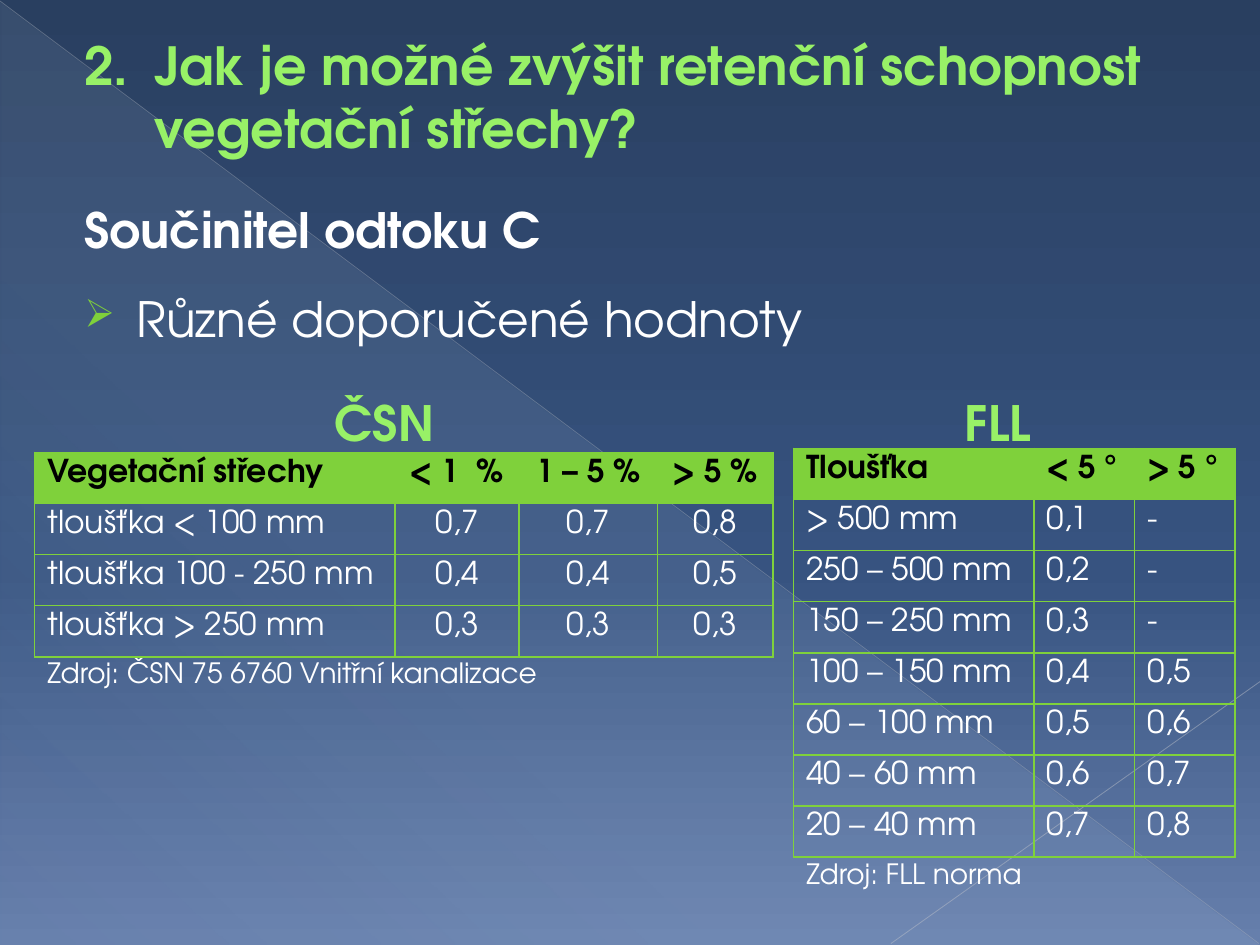
from lxml import etree
from pptx import Presentation
from pptx.dml.color import RGBColor
from pptx.enum.shapes import MSO_CONNECTOR, MSO_SHAPE
from pptx.enum.text import MSO_ANCHOR, PP_ALIGN
from pptx.oxml.ns import qn
from pptx.util import Cm, Pt

STRAIGHT = MSO_CONNECTOR.STRAIGHT
TRIANGLE = MSO_SHAPE.RIGHT_TRIANGLE
MIDDLE = MSO_ANCHOR.MIDDLE
LEFT, CENTER = PP_ALIGN.LEFT, PP_ALIGN.CENTER

FONT = "TeX Gyre Adventor"
BODY_SIZE = 27.8
NO_STYLE = "{2D5ABB26-0587-4C30-8999-92F81FD0307C}"
COLORS = {
    "sky_top": "293F60", "sky_mid": "375380", "sky_low": "667FAC",
    "glow": "D6ECFF", "diagonal": "B7BCC5", "corner": "BFC3CB",
    "heading": "98F167", "accent": "7FD13B", "text": "FFFFFF", "dark": "000000",
}
ROW_HEIGHT = 1.03

CSN_ROWS = [
    ["Vegetační střechy", "< 1  %", "1 – 5 %", "> 5 %"],
    ["tloušťka < 100 mm", "0,7", "0,7", "0,8"],
    ["tloušťka 100 - 250 mm", "0,4", "0,4", "0,5"],
    ["tloušťka > 250 mm", "0,3", "0,3", "0,3"],
]
FLL_ROWS = [
    ["Tloušťka", "< 5 °", "> 5 °"],
    ["> 500 mm", "0,1", "-"],
    ["250 – 500 mm", "0,2", "-"],
    ["150 – 250 mm", "0,3", "-"],
    ["100 – 150 mm", "0,4", "0,5"],
    ["60 – 100 mm", "0,5", "0,6"],
    ["40 – 60 mm", "0,6", "0,7"],
    ["20 – 40 mm", "0,7", "0,8"],
]


def rgb(name):
    return RGBColor.from_string(COLORS[name])


def add_xml(parent, tag, **attrs):
    child = etree.SubElement(parent, qn(tag))
    for key, value in attrs.items():
        child.set(key, str(value))
    return child


def set_gradient(fill, props, stops, angle):
    """Stops are (position %, colour name, opacity %)."""
    fill.gradient()
    grad = props.find(qn("a:gradFill"))
    for child in list(grad):
        grad.remove(child)
    stop_list = add_xml(grad, "a:gsLst")
    for pos, color, opacity in stops:
        gs = add_xml(stop_list, "a:gs", pos=pos * 1000)
        clr = add_xml(gs, "a:srgbClr", val=COLORS[color])
        add_xml(clr, "a:alpha", val=opacity * 1000)
    add_xml(grad, "a:lin", ang=angle * 60000, scaled=0)


def add_line(slide, start, end, color, width, opacity):
    ln = slide.shapes.add_connector(STRAIGHT, *map(Cm, start + end))
    ln.line.color.rgb = rgb(color)
    ln.line.width = Pt(width)
    props = ln._element.spPr
    add_xml(next(props.iter(qn("a:srgbClr"))), "a:alpha", val=opacity * 1000)
    add_xml(props, "a:effectLst")


def add_text(p, text, size, color, bold=False):
    r = p.add_run()
    r.text = text
    values = {"name": FONT, "size": Pt(size), "bold": bold}
    for name, value in values.items():
        setattr(r.font, name, value)
    r.font.color.rgb = rgb(color)


def add_box(slide, left, top, width, height):
    sp = slide.shapes.add_textbox(Cm(left), Cm(top), Cm(width), Cm(height))
    sp.text_frame.word_wrap = True
    return sp.text_frame


def format_paragraph(p, margin, indent, before, after):
    p.space_before, p.space_after = Pt(before), Pt(after)
    props = p._p.get_or_add_pPr()
    props.set("marL", str(Cm(margin)))
    props.set("indent", str(Cm(indent)))
    return props


def set_borders(cell, sides):
    props = cell._tc.get_or_add_tcPr()
    for side in "LRTB":
        ln = add_xml(props, f"a:ln{side}", w=Pt(1))
        if side in sides:
            fill = add_xml(ln, "a:solidFill")
            add_xml(fill, "a:srgbClr", val=COLORS["accent"])
        else:
            add_xml(ln, "a:noFill")


def fill_cell(cell, text, size=18, header=False, align=LEFT, sides="LRTB"):
    set_borders(cell, sides)
    if header:
        cell.fill.solid()
        cell.fill.fore_color.rgb = rgb("accent")
    else:
        cell.fill.background()
    p = cell.text_frame.paragraphs[0]
    p.alignment = align
    add_text(p, text, size, "dark" if header else "text", header)


def add_value_table(slide, left, top, widths, rows, source, value_align):
    count = len(rows) + 1
    frame = slide.shapes.add_table(count, len(widths), Cm(left), Cm(top),
                                   Cm(sum(widths)), Cm(ROW_HEIGHT * count))
    table = frame.table
    table.first_row = table.horz_banding = False
    table._tbl.tblPr.find(qn("a:tableStyleId")).text = NO_STYLE
    for column, width in zip(table.columns, widths):
        column.width = Cm(width)
    for row in table.rows:
        row.height = Cm(ROW_HEIGHT)
    for i, values in enumerate(rows):
        for j, value in enumerate(values):
            fill_cell(table.cell(i, j), value, header=i == 0,
                      align=value_align if j else LEFT)
    # Source note across the last row
    note = table.cell(count - 1, 0)
    note.merge(table.cell(count - 1, len(widths) - 1))
    fill_cell(note, source, size=16, sides="T")
    for j in range(1, len(widths)):
        set_borders(table.cell(count - 1, j), "T")


def add_backdrop(slide):
    bg = slide.background
    fill = bg.fill
    set_gradient(fill, bg._cSld.bg.bgPr,
                 [(0, "sky_top", 100), (60, "sky_mid", 100), (100, "sky_low", 100)], 90)
    sp = slide.shapes.add_shape(TRIANGLE, Cm(0.02), Cm(0.04), Cm(25.36), Cm(19))
    sp.shadow.inherit = False
    sp.line.fill.background()
    set_gradient(sp.fill, sp._element.spPr,
                 [(0, "glow", 10), (70, "glow", 8), (100, "glow", 1)], 133)
    add_line(slide, (0, 0.02), (25.38, 19.02), "diagonal", 0.39, 35)
    add_line(slide, (25.4, 13.74), (17.96, 19.02), "corner", 0.47, 45)


def add_title(slide):
    tf = add_box(slide, 1.27, 0.74, 22.86, 2.39)
    tf.vertical_anchor = MIDDLE
    p = tf.paragraphs[0]
    props = format_paragraph(p, 1.6, -1.42, 0, 20)
    add_xml(props, "a:buAutoNum", type="arabicPeriod", startAt=2)
    add_text(p, "Jak je možné zvýšit retenční schopnost vegetační střechy?",
             30, "heading", True)


def add_body(slide):
    tf = add_box(slide, 1.27, 3.91, 22.86, 3.8)
    p = tf.paragraphs[0]
    format_paragraph(p, 0.18, 0, 5.5, 12)
    add_text(p, "Součinitel odtoku C", BODY_SIZE, "text", True)

    p = tf.add_paragraph()
    props = format_paragraph(p, 1.24, -1.06, 5.5, 20)
    add_xml(add_xml(props, "a:buClr"), "a:srgbClr", val=COLORS["accent"])
    add_xml(props, "a:buSzPct", val=80000)
    add_xml(props, "a:buChar", char="➢")
    add_text(p, "Různé doporučené hodnoty", BODY_SIZE, "text")


def add_table_heading(slide, left, text):
    p = add_box(slide, left, 7.8, 3, 1.3).paragraphs[0]
    format_paragraph(p, 0, 0, 5.5, 0)
    add_text(p, text, BODY_SIZE, "heading", True)


def main():
    prs = Presentation()
    prs.slide_width, prs.slide_height = Cm(25.4), Cm(19.05)
    slide = prs.slides.add_slide(prs.slide_layouts[6])
    add_backdrop(slide)
    add_title(slide)
    add_body(slide)
    # Two standards side by side
    add_table_heading(slide, 6.5, "ČSN")
    add_table_heading(slide, 19.2, "FLL")
    add_value_table(slide, 0.7, 9.12, [7.26, 2.5, 2.8, 2.32], CSN_ROWS,
                    "Zdroj: ČSN 75 6760 Vnitřní kanalizace", CENTER)
    add_value_table(slide, 16, 9.04, [4.84, 2.03, 2.03], FLL_ROWS,
                    "Zdroj: FLL norma", LEFT)
    prs.save("out.pptx")


if __name__ == "__main__":
    main()
